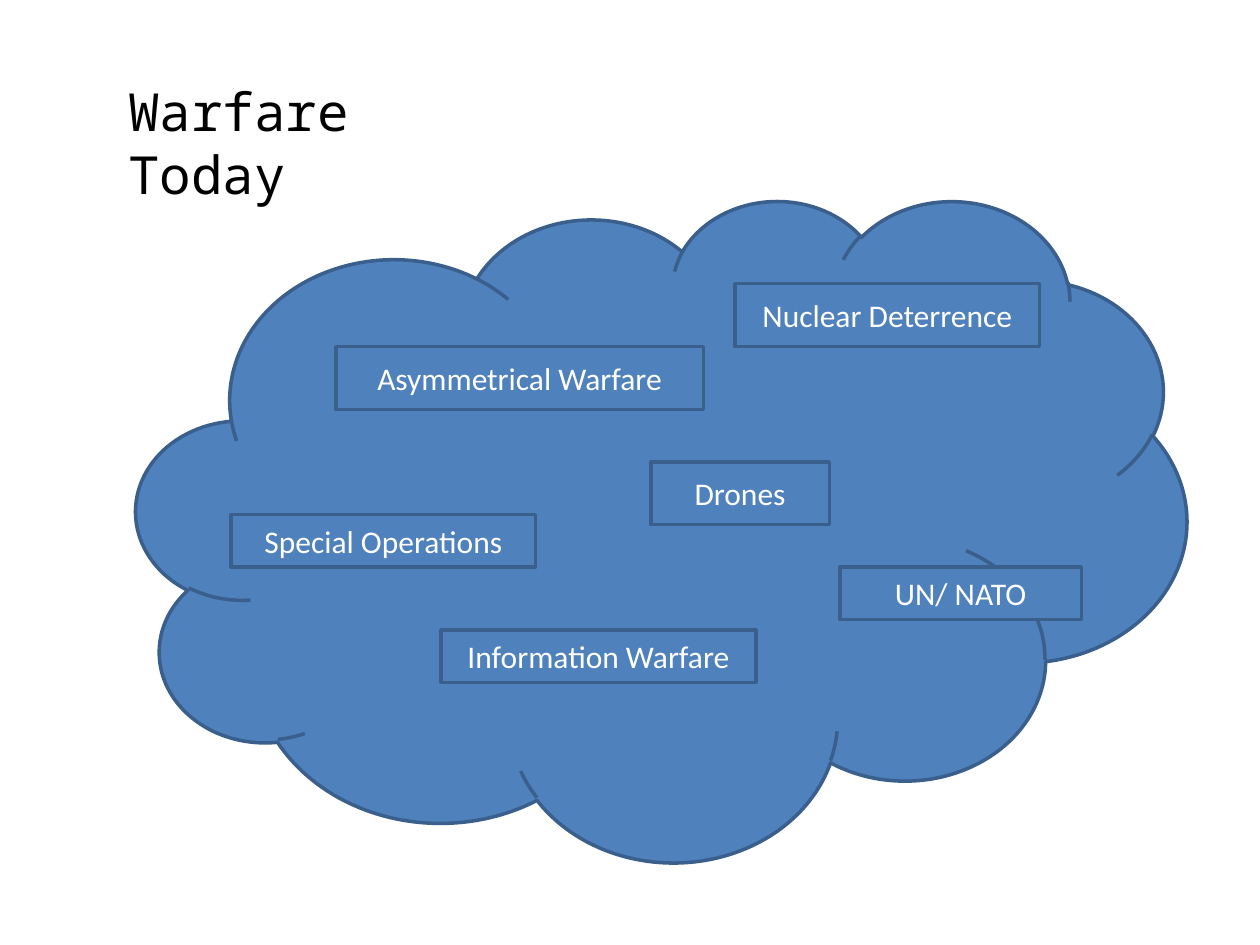
from pptx import Presentation
from pptx.dml.color import RGBColor
from pptx.enum.shapes import MSO_SHAPE
from pptx.enum.text import MSO_ANCHOR, MSO_AUTO_SIZE, PP_ALIGN
from pptx.util import Cm, Pt

CLOUD = MSO_SHAPE.CLOUD
RECT = MSO_SHAPE.RECTANGLE
MIDDLE = MSO_ANCHOR.MIDDLE
GROW = MSO_AUTO_SIZE.SHAPE_TO_FIT_TEXT
LEFT = PP_ALIGN.LEFT
CENTER = PP_ALIGN.CENTER

BLUE = "4F81BD"
EDGE = "3A5F8C"
TOPICS = [
    ("Asymmetrical Warfare", 6.77, 6.99, 7.41, 1.27),
    ("Nuclear Deterrence", 14.82, 5.72, 6.14, 1.27),
    ("Special Operations", 4.66, 10.37, 6.14, 1.06),
    ("Drones", 13.12, 9.31, 3.6, 1.27),
    ("Information Warfare", 8.89, 12.7, 6.35, 1.06),
    ("UN/ NATO", 16.93, 11.43, 4.87, 1.06),
]


def paint(code):
    return RGBColor.from_string(code)


def write(frame, text, font="Calibri", size=18, color="FFFFFF", align=CENTER):
    frame.word_wrap = True
    para = frame.paragraphs[0]
    para.alignment = align
    run = para.add_run()
    run.text = text
    run.font.name = font
    run.font.size = Pt(size)
    run.font.color.rgb = paint(color)


def add_form(slide, kind, x, y, w, h):
    form = slide.shapes.add_shape(kind, Cm(x), Cm(y), Cm(w), Cm(h))
    form.shadow.inherit = False
    form.fill.solid()
    form.fill.fore_color.rgb = paint(BLUE)
    form.line.color.rgb = paint(EDGE)
    form.line.width = Pt(2)
    return form


def add_topic(slide, text, x, y, w, h):
    frame = add_form(slide, RECT, x, y, w, h).text_frame
    frame.vertical_anchor = MIDDLE
    write(frame, text)


def add_title(slide, text, x, y, w, h):
    frame = slide.shapes.add_textbox(Cm(x), Cm(y), Cm(w), Cm(h)).text_frame
    frame.auto_size = GROW
    write(frame, text, font="Noto Sans Mono", size=30, color="000000", align=LEFT)


def main():
    deck = Presentation()
    deck.slide_width = Cm(25.4)
    deck.slide_height = Cm(19.05)
    slide = deck.slides.add_slide(deck.slide_layouts[6])
    add_title(slide, "Warfare Today", 2.34, 1.47, 8.15, 1.55)
    add_form(slide, CLOUD, 2.75, 4.02, 21.17, 13.33)
    for topic in TOPICS:
        add_topic(slide, *topic)
    deck.save("out.pptx")


if __name__ == "__main__":
    main()
